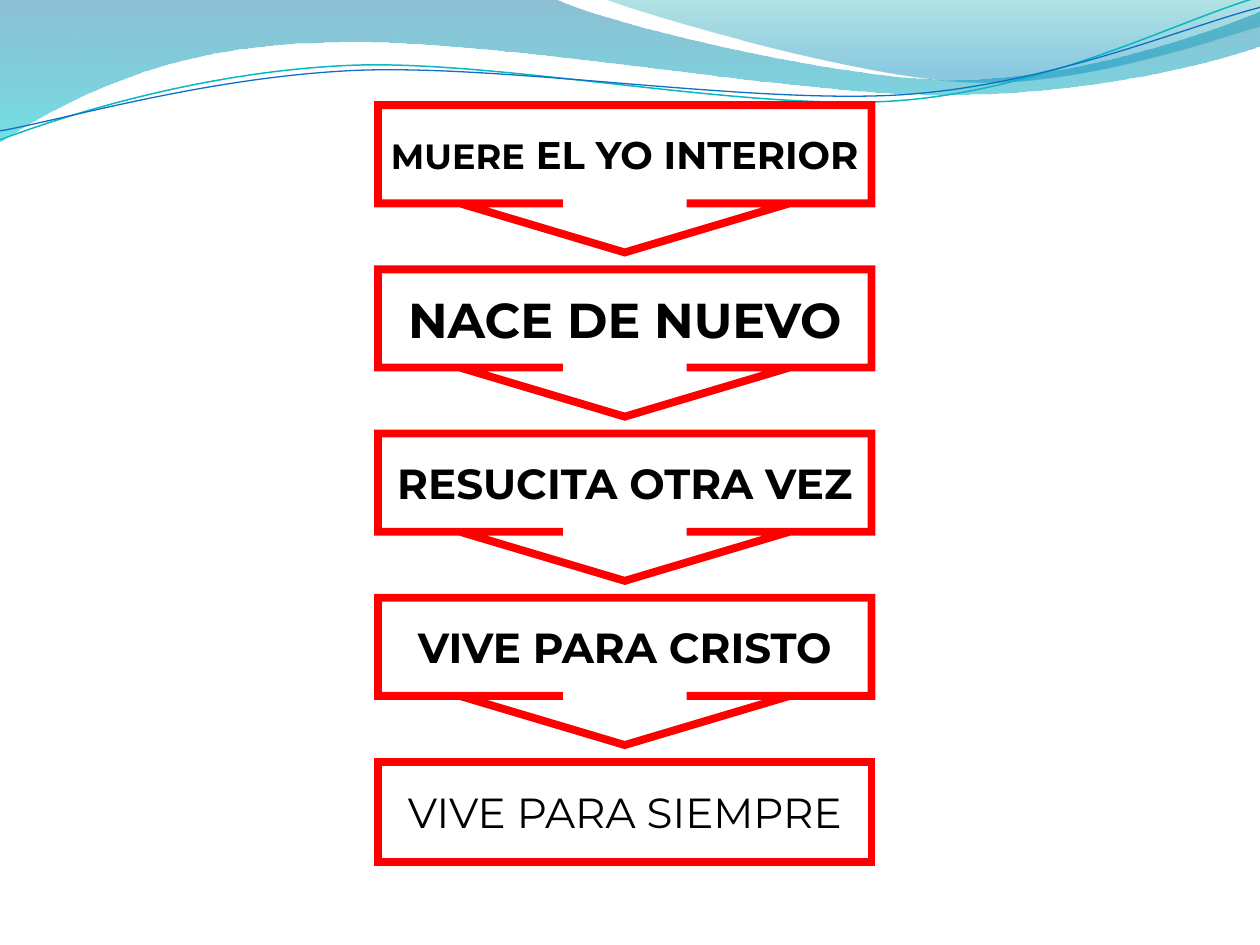
from dataclasses import dataclass
from math import cos, radians, sin

from lxml.etree import SubElement
from pptx import Presentation
from pptx.dml.color import RGBColor
from pptx.enum.shapes import MSO_SHAPE as Shape
from pptx.enum.text import MSO_ANCHOR as Anchor, PP_ALIGN as Align
from pptx.oxml.ns import qn
from pptx.util import Cm, Pt


@dataclass(frozen=True)
class Theme:
    font: str = "Montserrat"
    ink: str = "000000"
    paper: str = "FFFFFF"
    border: str = "FF0000"
    border_width: float = 4.5
    small: int = 20
    medium: int = 22
    large: int = 24
    huge: int = 28
    # Gradient stops: position, colour, opacity in percent
    back_wave: tuple = ((0, "0074A1", 45), (1, "00C6CF", 55))
    front_wave: tuple = ((0, "00A1A9", 30), (0.8, "008BBF", 45))
    teal_line: tuple = ("0AB8BF", 0.85)
    blue_line: tuple = ("0F6FC6", 0.75)


THEME = Theme()

# Boxes (left, top, width, height) and outlines in cm on the slide;
# in an outline two numbers are a corner, six are a cubic curve
BACK_BOX = (-0.03, -0.03, 25.45, 2.9)
BACK_WAVE = [
    (0, -0.03), (11.18, -0.03),
    (12.09, 0.43, 16.87, 1.6, 19.25, 1.6),
    (21.67, 1.6, 24.33, 0.66, 25.4, 0.23),
    (25.43, 0.91),
    (24.97, 1.12, 22.1, 1.93, 18.95, 1.91),
    (15.8, 1.91, 9.7, 0.71, 6.53, 0.86),
    (3.28, 0.89, 1.17, 2.11, -0.03, 2.87),
    (0, -0.03),
]
FRONT_BOX = (12.17, -0.03, 13.23, 1.78)
FRONT_WAVE = [
    (12.17, -0.03),
    (12.93, 0.28, 17.32, 1.57, 19.53, 1.65),
    (21.74, 1.75, 24.41, 0.81, 25.4, 0.53),
    (25.4, 0), (12.17, -0.03),
]
LINE_TILT = -2.7
TEAL_BOX = (-0.05, 0.56, 25.45, 1.8)
TEAL_LINE = [
    (0, 2.82),
    (1.22, 2.36, 4.01, 1.45, 7.04, 1.32),
    (10.03, 1.19, 15.06, 2.26, 18.11, 2.03),
    (21.16, 1.8, 23.83, 0.38, 25.35, -0.05),
]
BLUE_BOX = (-0.05, 0.76, 25.48, 1.47)
BLUE_LINE = [
    (0, 2.64),
    (1.19, 2.44, 4.17, 1.55, 7.19, 1.42),
    (10.24, 1.3, 15.16, 2.11, 18.21, 1.91),
    (21.23, 1.7, 23.9, 0.53, 25.4, 0.15),
]

# Each step is a list of (text, size, bold)
STEPS = [
    [("MUERE", THEME.small, True), (" EL YO INTERIOR", THEME.medium, True)],
    [("NACE DE NUEVO", THEME.huge, True)],
    [("RESUCITA OTRA VEZ", THEME.large, True)],
    [("VIVE PARA CRISTO", THEME.large, True)],
    [("VIVE PARA SIEMPRE", THEME.large, False)],
]
LEFT, TOP, WIDTH, PITCH = 7.62, 2.12, 9.95, 3.31
CALLOUT_HEIGHT, BOX_HEIGHT = 2.97, 2.01
CALLOUT_ADJUSTMENTS = (0.839, 1.119, 0.333, 0.667)


def rgb(value):
    return RGBColor.from_string(value)


def to_local(x, y, box, tilt):
    """Place a slide point inside a box that is tilted about its middle."""
    left, top, width, height = box
    dx, dy = x - left - width / 2, y - top - height / 2
    turn = radians(-tilt)
    return (Cm(width / 2 + dx * cos(turn) - dy * sin(turn)),
            Cm(height / 2 + dx * sin(turn) + dy * cos(turn)))


def add_outline(slide, outline, box, close=False, tilt=0):
    left, top, width, height = (Cm(value) for value in box)
    builder = slide.shapes.build_freeform(left, top)
    builder.add_line_segments([(left + width, top + height)], close=False)
    curve = builder.convert_to_shape()
    curve.rotation = tilt
    curve.shadow.inherit = False

    # python-pptx draws straight segments only, so write the curves here
    track = next(curve._element.iter(qn("a:path")))
    track.clear()
    track.set("w", str(width))
    track.set("h", str(height))
    for i, part in enumerate(outline):
        tag = "a:moveTo" if i == 0 else "a:lnTo" if len(part) == 2 else "a:cubicBezTo"
        segment = SubElement(track, qn(tag))
        for x, y in zip(part[::2], part[1::2]):
            local_x, local_y = to_local(x, y, box, tilt)
            point = SubElement(segment, qn("a:pt"))
            point.set("x", str(local_x))
            point.set("y", str(local_y))
    if close:
        SubElement(track, qn("a:close"))
    return curve


def add_wave(slide, outline, box, stops):
    wave = add_outline(slide, outline, box, close=True)
    wave.line.fill.background()
    wave.fill.gradient()
    wave.fill.gradient_angle = 270  # top to bottom
    for stop, (position, color, _) in zip(wave.fill.gradient_stops, stops):
        stop.position = position
        stop.color.rgb = rgb(color)
    # Opacity of each stop
    colors = wave._element.spPr.iter(qn("a:srgbClr"))
    for color, (_, _, opacity) in zip(colors, stops):
        SubElement(color, qn("a:alpha")).set("val", str(opacity * 1000))


def add_wave_line(slide, outline, box, color, width):
    stroke = add_outline(slide, outline, box, tilt=LINE_TILT)
    stroke.fill.background()
    stroke.line.color.rgb = rgb(color)
    stroke.line.width = Pt(width)


def add_text(paragraph, text, *, size, bold, color=THEME.ink):
    run = paragraph.add_run()
    run.text = text
    run.font.name = THEME.font
    run.font.size = Pt(size)
    run.font.bold = bold
    run.font.color.rgb = rgb(color)


def add_step(slide, top, label, is_last):
    kind, height = ((Shape.RECTANGLE, BOX_HEIGHT) if is_last
                    else (Shape.DOWN_ARROW_CALLOUT, CALLOUT_HEIGHT))
    step = slide.shapes.add_shape(kind, Cm(LEFT), Cm(top), Cm(WIDTH), Cm(height))
    if not is_last:
        for i, value in enumerate(CALLOUT_ADJUSTMENTS):
            step.adjustments[i] = value
    step.shadow.inherit = False
    step.fill.solid()
    step.fill.fore_color.rgb = rgb(THEME.paper)
    step.line.color.rgb = rgb(THEME.border)
    step.line.width = Pt(THEME.border_width)
    # Sharp corners
    border = step._element.spPr.find(qn("a:ln"))
    SubElement(border, qn("a:miter")).set("lim", "800000")

    frame = step.text_frame
    frame.word_wrap = False
    frame.vertical_anchor = Anchor.MIDDLE
    paragraph = frame.paragraphs[0]
    paragraph.alignment = Align.CENTER
    for text, size, bold in label:
        add_text(paragraph, text, size=size, bold=bold)


def main():
    deck = Presentation()
    deck.slide_width, deck.slide_height = Cm(25.4), Cm(19.05)
    slide = deck.slides.add_slide(deck.slide_layouts[6])

    # Waves along the top edge
    add_wave(slide, BACK_WAVE, BACK_BOX, THEME.back_wave)
    add_wave(slide, FRONT_WAVE, FRONT_BOX, THEME.front_wave)
    add_wave_line(slide, TEAL_LINE, TEAL_BOX, *THEME.teal_line)
    add_wave_line(slide, BLUE_LINE, BLUE_BOX, *THEME.blue_line)

    # Column of steps, each pointing to the next
    for i, label in enumerate(STEPS):
        add_step(slide, TOP + i * PITCH, label, is_last=i == len(STEPS) - 1)

    deck.save("out.pptx")


if __name__ == "__main__":
    main()
